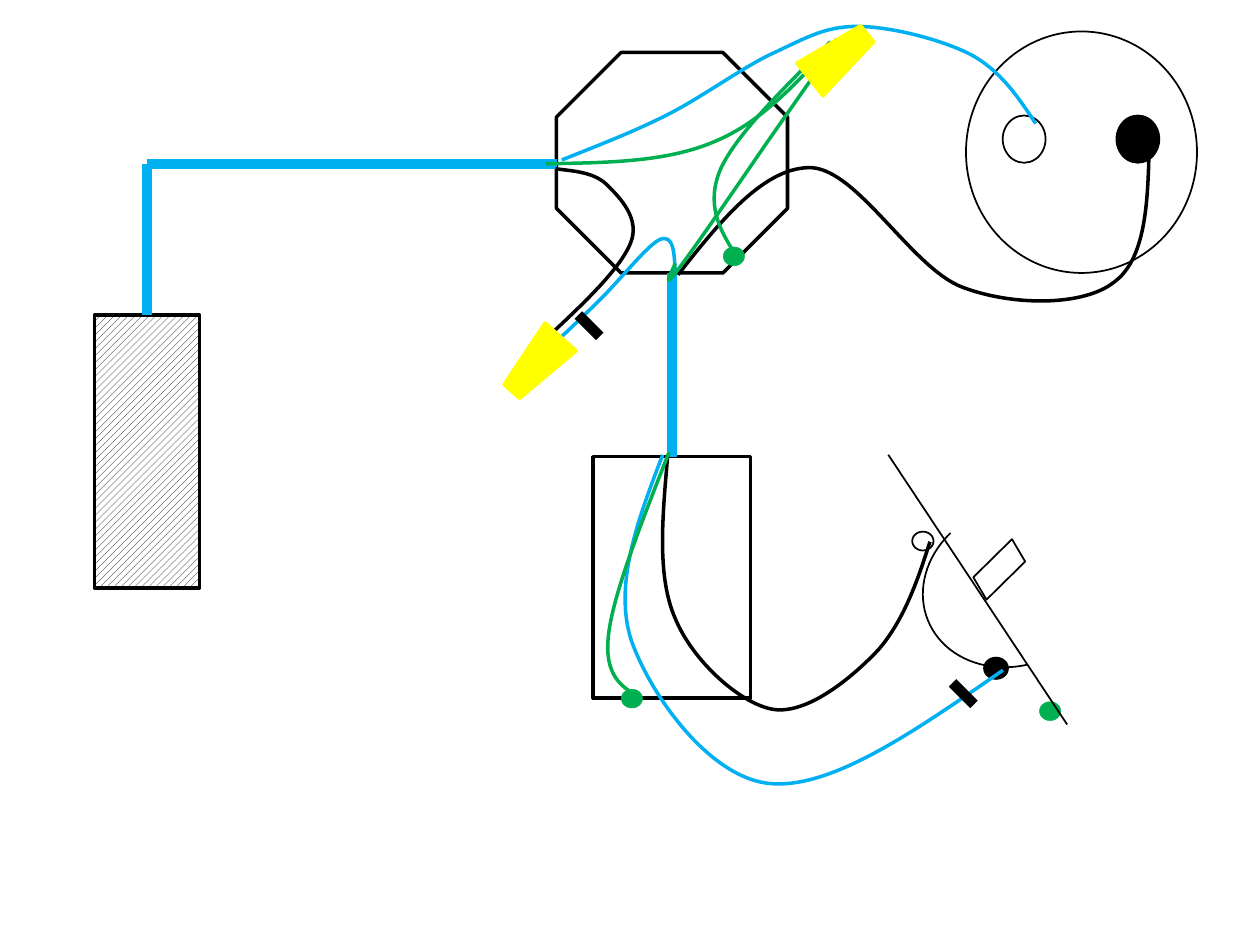
"""Draw a wiring diagram of a breaker panel, junction box, lamp holder and switch."""
from dataclasses import dataclass
from itertools import pairwise
from typing import Any, Optional

import lxml.etree
import pptx
import pptx.dml.color
import pptx.enum.dml
import pptx.enum.shapes
import pptx.oxml.ns
import pptx.util

Pt = pptx.util.Pt
RGBColor = pptx.dml.color.RGBColor
Preset = pptx.enum.shapes.MSO_SHAPE
qn = pptx.oxml.ns.qn

Point = tuple[float, float]

BLACK = RGBColor(0x00, 0x00, 0x00)
WHITE = RGBColor(0xFF, 0xFF, 0xFF)
BLUE = RGBColor(0x00, 0xB0, 0xF0)
GREEN = RGBColor(0x00, 0xB0, 0x50)
YELLOW = RGBColor(0xFF, 0xFF, 0x00)


@dataclass(frozen=True)
class Part:
    preset: Any
    left: float
    top: float
    width: float
    height: float
    fill: Optional[RGBColor] = None
    line: RGBColor = BLACK
    weight: float = 1
    rotation: float = 0
    adjustments: tuple[float, ...] = ()


@dataclass(frozen=True)
class Wire:
    color: RGBColor
    start: Point
    controls: tuple[Point, ...]


def ground_screw(left: float, top: float) -> Part:
    return Part(Preset.OVAL, left, top, 12.2, 10.8, GREEN, GREEN, 0.25)


def wire_nut(left: float, top: float, rotation: float) -> Part:
    return Part(Preset.TRAPEZOID, left, top, 23.8, 41.8, YELLOW, YELLOW, 2, rotation)


PANEL = Part(Preset.RECTANGLE, 54, 180, 60, 156, WHITE, weight=2)
BOXES = [
    Part(Preset.OCTAGON, 318, 30, 132, 126, WHITE, weight=2),
    Part(Preset.RECTANGLE, 339, 261, 90, 138, WHITE, weight=2),
]
LAMP_HOLDER = [
    Part(Preset.OVAL, 552, 18, 132, 138),
    Part(Preset.OVAL, 573, 66, 24.5, 27),
    Part(Preset.OVAL, 638, 66, 24.5, 27, BLACK),
]
SWITCH = [
    Part(Preset.ARC, 526.3, 288.7, 106.6, 91.4, rotation=157.7,
         adjustments=(169.91, 37.02)),
    Part(Preset.OVAL, 521.3, 303.8, 12.2, 10.8),
    Part(Preset.OVAL, 562.3, 375.8, 13.7, 12.2, BLACK),
    Part(Preset.PARALLELOGRAM, 553.7, 318.2, 34.6, 14.4, rotation=315.4),
    ground_screw(594, 401),
]
SWITCH_PLATE = [(507.6, 259.9), (609.8, 414)]
CABLES = [
    [(84, 180), (84, 93.6), (318.2, 93.6)],
    [(384, 156), (384, 261)],
]
HOT_MARKS = [
    [(330.5, 180), (342.7, 192.2)],
    [(544.3, 390.2), (556.6, 402.5)],
]
WIRES = [
    Wire(BLUE, (321.1, 91.4), (
        (340.6, 83.5), (360, 76.3), (380.2, 66.2),
        (400.3, 56.2), (422.6, 39.6), (440.6, 31),
        (459.4, 22.3), (470.9, 15.1), (489.6, 15.1),
        (508.3, 15.1), (537.1, 22.3), (554.4, 31),
        (571.7, 40.3), (581.8, 55.4), (591.8, 70.6))),
    Wire(BLACK, (317.5, 96.5), (
        (329, 97.9), (339.8, 98.6), (347, 105.8),
        (354.2, 113), (366.5, 125.3), (360, 139.7),
        (353.5, 154.8), (331.9, 175), (310.3, 195.1))),
    Wire(BLUE, (385.9, 155.5), (
        (385.2, 144.7), (385.2, 133.9), (377.3, 136.8),
        (370.1, 139.7), (352.8, 162), (341.3, 172.8),
        (330.5, 183.6), (321.1, 192.2), (311.8, 200.9))),
    Wire(BLUE, (378.7, 259.9), (
        (364.3, 297.4), (350.6, 334.1), (360.7, 365.8),
        (371.5, 396.7), (405.4, 445), (440.6, 447.8),
        (475.9, 450.7), (524.2, 416.9), (573.1, 383))),
    Wire(BLACK, (381.6, 259.9), (
        (378.7, 294.5), (375.1, 329), (385.9, 353.5),
        (396, 378), (423.4, 402.5), (442.1, 405.4),
        (461.5, 408.2), (486.7, 387.4), (501.8, 371.5),
        (516.2, 355), (524.2, 332.6), (531.4, 309.6))),
    Wire(BLACK, (387.4, 157), (
        (411.8, 126), (437, 95), (463.7, 95.8),
        (490.3, 97.2), (521.3, 153.4), (550.1, 164.2),
        (578.9, 175), (619.2, 175), (636.5, 161.3),
        (654.5, 148.3), (655.9, 116.6), (656.6, 85))),
    Wire(GREEN, (311.8, 93.6), (
        (346.3, 92.9), (380.9, 92.9), (409, 80.6),
        (436.3, 69.1), (457.2, 45.4), (478.1, 22.3))),
    Wire(GREEN, (385.9, 150.5), (
        (382.3, 158.4), (378.7, 165.6), (387.4, 154.1),
        (396, 143.3), (437.8, 82.1), (437.8, 82.1),
        (437.8, 82.1), (480.2, 21.6), (480.2, 21.6))),
    Wire(GREEN, (474.5, 23.8), (
        (447.8, 50.4), (421.2, 76.3), (411.8, 96.5),
        (403.2, 116.6), (411.1, 131), (419.8, 144.7))),
    Wire(GREEN, (382.3, 258.5), (
        (366.5, 298.8), (350.6, 339.1), (347.8, 362.2),
        (344.9, 385.9), (355, 392.4), (365, 398.2))),
]
FITTINGS = [
    ground_screw(413.3, 141.1),
    ground_screw(355, 393.8),
    wire_nut(294.5, 187.2, 221.8),
    wire_nut(467.3, 11.5, 51.4),
]


def set_line(shape: Any, color: RGBColor, weight: float) -> None:
    shape.line.color.rgb = color
    shape.line.width = Pt(weight)


def draw_part(shapes: Any, part: Part) -> Any:
    shape = shapes.add_shape(part.preset, Pt(part.left), Pt(part.top),
                             Pt(part.width), Pt(part.height))
    shape.shadow.inherit = False
    shape.rotation = part.rotation
    for index, value in enumerate(part.adjustments):
        shape.adjustments[index] = value
    if part.fill is None:
        shape.fill.background()
    else:
        shape.fill.solid()
        shape.fill.fore_color.rgb = part.fill
    set_line(shape, part.line, part.weight)
    return shape


def draw_lines(shapes: Any, points: list[Point], color: RGBColor, weight: float) -> None:
    for start, end in pairwise(points):
        connector = shapes.add_connector(pptx.enum.shapes.MSO_CONNECTOR.STRAIGHT,
                                         *map(Pt, start + end))
        set_line(connector, color, weight)
        lxml.etree.SubElement(connector._element.spPr, qn("a:effectLst"))


def draw_wire(shapes: Any, wire: Wire) -> None:
    builder = shapes.build_freeform(*map(Pt, wire.start))
    builder.add_line_segments([tuple(map(Pt, point)) for point in wire.controls], close=False)
    shape = builder.convert_to_shape()
    shape.shadow.inherit = False
    shape.fill.background()
    set_line(shape, wire.color, 2)
    segments = list(shape._element.iter(qn("a:lnTo")))
    outline = segments[0].getparent()
    for first in range(0, len(segments), 3):
        curve = lxml.etree.SubElement(outline, qn("a:cubicBezTo"))
        for segment in segments[first:first + 3]:
            curve.append(segment[0])
            outline.remove(segment)


def main() -> None:
    presentation = pptx.Presentation()
    presentation.slide_width, presentation.slide_height = Pt(720), Pt(540)
    slide = presentation.slides.add_slide(presentation.slide_layouts[6])
    shapes = slide.shapes
    panel = draw_part(shapes, PANEL)
    panel.fill.patterned()
    panel.fill.pattern = pptx.enum.dml.MSO_PATTERN.WIDE_UPWARD_DIAGONAL
    panel.fill.fore_color.rgb, panel.fill.back_color.rgb = BLACK, WHITE
    for box in BOXES:
        draw_part(shapes, box)
    lamp_holder, switch = shapes.add_group_shape(), shapes.add_group_shape()
    for group, parts in ((lamp_holder, LAMP_HOLDER), (switch, SWITCH)):
        for part in parts:
            draw_part(group.shapes, part)
    draw_lines(switch.shapes, SWITCH_PLATE, BLACK, 1)
    for cable in CABLES:
        draw_lines(shapes, cable, BLUE, 6)
    for wire in WIRES:
        draw_wire(shapes, wire)
    for mark in HOT_MARKS:
        draw_lines(shapes, mark, BLACK, 6)
    for fitting in FITTINGS:
        draw_part(shapes, fitting)
    presentation.save("out.pptx")


if __name__ == "__main__":
    main()
